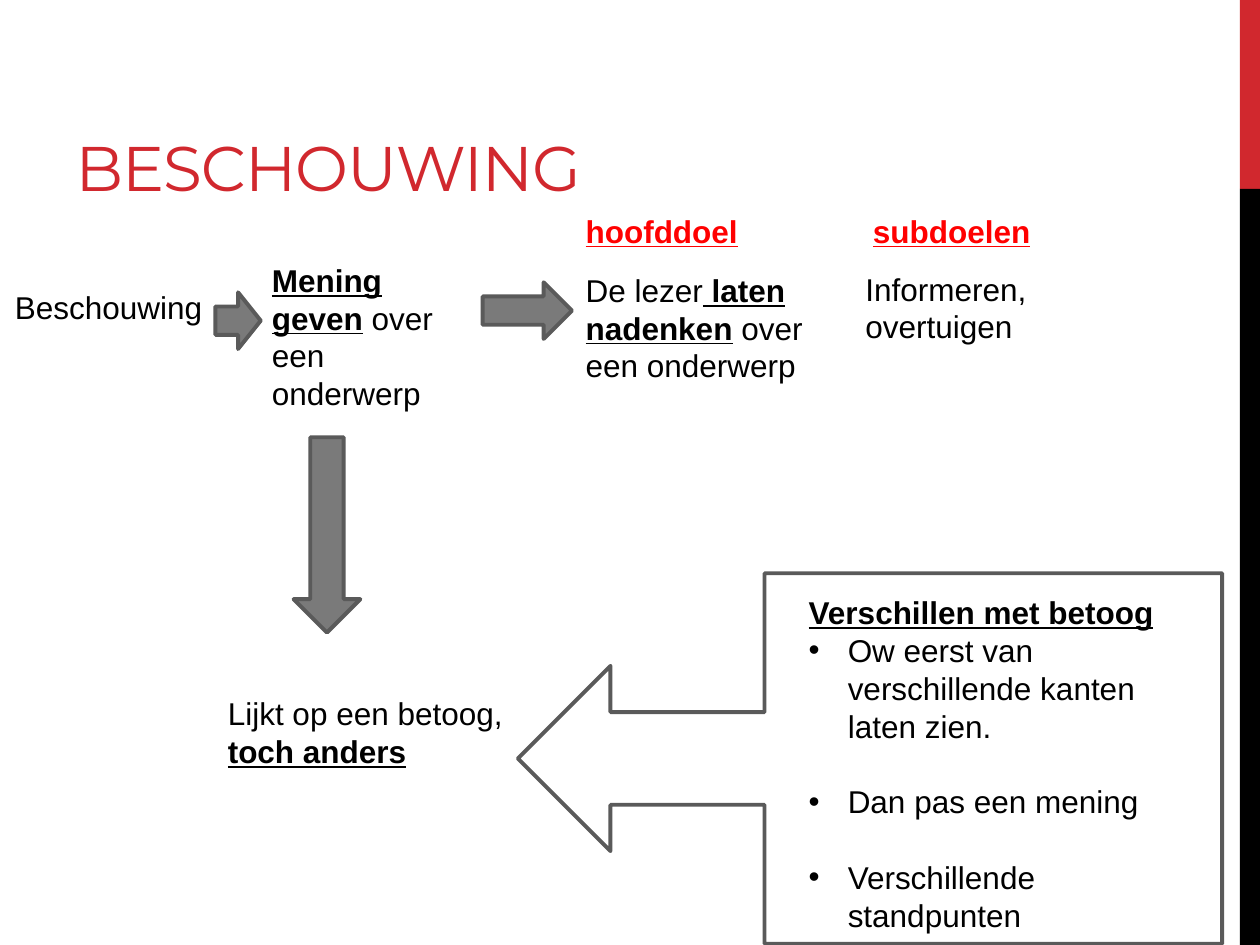
from lxml.etree import SubElement
from pptx import Presentation
from pptx.dml.color import RGBColor
from pptx.enum.shapes import MSO_SHAPE as Shape
from pptx.enum.text import MSO_ANCHOR as Anchor, MSO_AUTO_SIZE as AutoSize, PP_ALIGN as Align
from pptx.oxml.ns import qn
from pptx.util import Inches, Pt

COLORS = {
    "accent": "D1282E",
    "heading": "FF0000",
    "text": "000000",
    "band": "000000",
    "arrow": "7A7A7A",
    "outline": "5A5A5A",
    "white": "FFFFFF",
}


def color(name):
    return RGBColor.from_string(COLORS[name])


def add_shape(slide, kind, box, fill, line=None, rotation=0):
    shape = slide.shapes.add_shape(kind, *map(Inches, box))
    shape.shadow.inherit = False
    shape.rotation = rotation
    shape.fill.solid()
    shape.fill.fore_color.rgb = color(fill)
    if line:
        shape.line.color.rgb = color(line)
        shape.line.width = Pt(2.25)
    else:
        shape.line.fill.background()


def write_runs(paragraph, runs, text_color="text"):
    """Write (text, emphasized) runs; emphasis is bold and underlined."""
    paragraph.font.name = "Arial"
    paragraph.font.size = Pt(18)
    paragraph.font.color.rgb = color(text_color)
    for text, emphasized in runs:
        run = paragraph.add_run()
        run.text = text
        run.font.bold = run.font.underline = emphasized


def add_text(slide, box, runs, text_color="text"):
    frame = slide.shapes.add_textbox(*map(Inches, box)).text_frame
    frame.word_wrap = True
    write_runs(frame.paragraphs[0], runs, text_color)
    return frame


def add_bullet(frame, text, space_before):
    paragraph = frame.add_paragraph()
    write_runs(paragraph, [(text, False)])
    paragraph.space_before = Pt(space_before)
    properties = paragraph._p.get_or_add_pPr()
    properties.set("marL", str(Inches(0.31)))
    properties.set("indent", str(Inches(-0.31)))
    bullet_font = properties.makeelement(qn("a:buFont"), {"typeface": "Arial"})
    default_run = properties.find(qn("a:defRPr"))
    default_run.addprevious(bullet_font)
    bullet = SubElement(properties, qn("a:buChar"), char="•")
    default_run.addprevious(bullet)


def set_title(slide, text):
    title = slide.shapes.title
    title.left, title.top, title.width, title.height = map(Inches, (0.5, 0.17, 6.33, 1.5))
    frame = title.text_frame
    frame.auto_size = AutoSize.NONE
    frame.vertical_anchor = Anchor.BOTTOM
    paragraph = frame.paragraphs[0]
    paragraph.alignment = Align.LEFT
    run = paragraph.add_run()
    run.text = text
    run.font.name = "Montserrat"
    run.font.size = Pt(36)
    run.font.color.rgb = color("accent")
    run._r.get_or_add_rPr().set("spc", "-60")


def main():
    presentation = Presentation()
    presentation.slide_width, presentation.slide_height = Inches(10), Inches(7.5)
    slide = presentation.slides.add_slide(presentation.slide_layouts[5])

    # Side band and title
    add_shape(slide, Shape.RECTANGLE, (9.84, 0, 0.16, 1.5), "accent")
    add_shape(slide, Shape.RECTANGLE, (9.84, 1.5, 0.16, 6), "band")
    set_title(slide, "BESCHOUWING")

    # Arrows: term to meaning, meaning to goals, meaning down to comparison
    for box, rotation in [
        ((1.71, 2.32, 0.36, 0.45), 0),
        ((3.83, 2.24, 0.71, 0.45), 0),
        ((1.82, 3.98, 1.55, 0.53), 90),
    ]:
        add_shape(slide, Shape.RIGHT_ARROW, box, "arrow", "outline", rotation)

    # Term, meaning and goals
    add_text(slide, (0.02, 2.24, 1.7, 0.4), [("Beschouwing", False)])
    add_text(slide, (2.06, 2.02, 1.63, 1.31),
             [("Mening geven", True), (" over een onderwerp", False)])
    add_text(slide, (4.55, 1.63, 2, 0.4), [("hoofddoel", True)], "heading")
    add_text(slide, (4.55, 2.1, 2.13, 1.01),
             [("De lezer", False), (" laten nadenken", True), (" over een onderwerp", False)])
    add_text(slide, (6.83, 1.63, 2, 0.4), [("subdoelen", True)], "heading")
    add_text(slide, (6.77, 2.09, 2.13, 0.71), [("Informeren, overtuigen", False)])

    # Comparison and callout with the differences
    add_text(slide, (1.71, 5.46, 2.83, 0.71),
             [("Lijkt op een betoog, ", False), ("toch anders", True)])
    add_shape(slide, Shape.LEFT_ARROW_CALLOUT, (4.11, 4.55, 5.59, 2.94), "white", "outline")
    differences = add_text(slide, (6.32, 4.66, 3.38, 2.83), [("Verschillen met betoog", True)])
    add_bullet(differences, "Ow eerst van verschillende kanten laten zien.", 0)
    add_bullet(differences, "Dan pas een mening", 21.6)
    add_bullet(differences, "Verschillende standpunten", 21.6)

    presentation.save("out.pptx")


if __name__ == "__main__":
    main()
